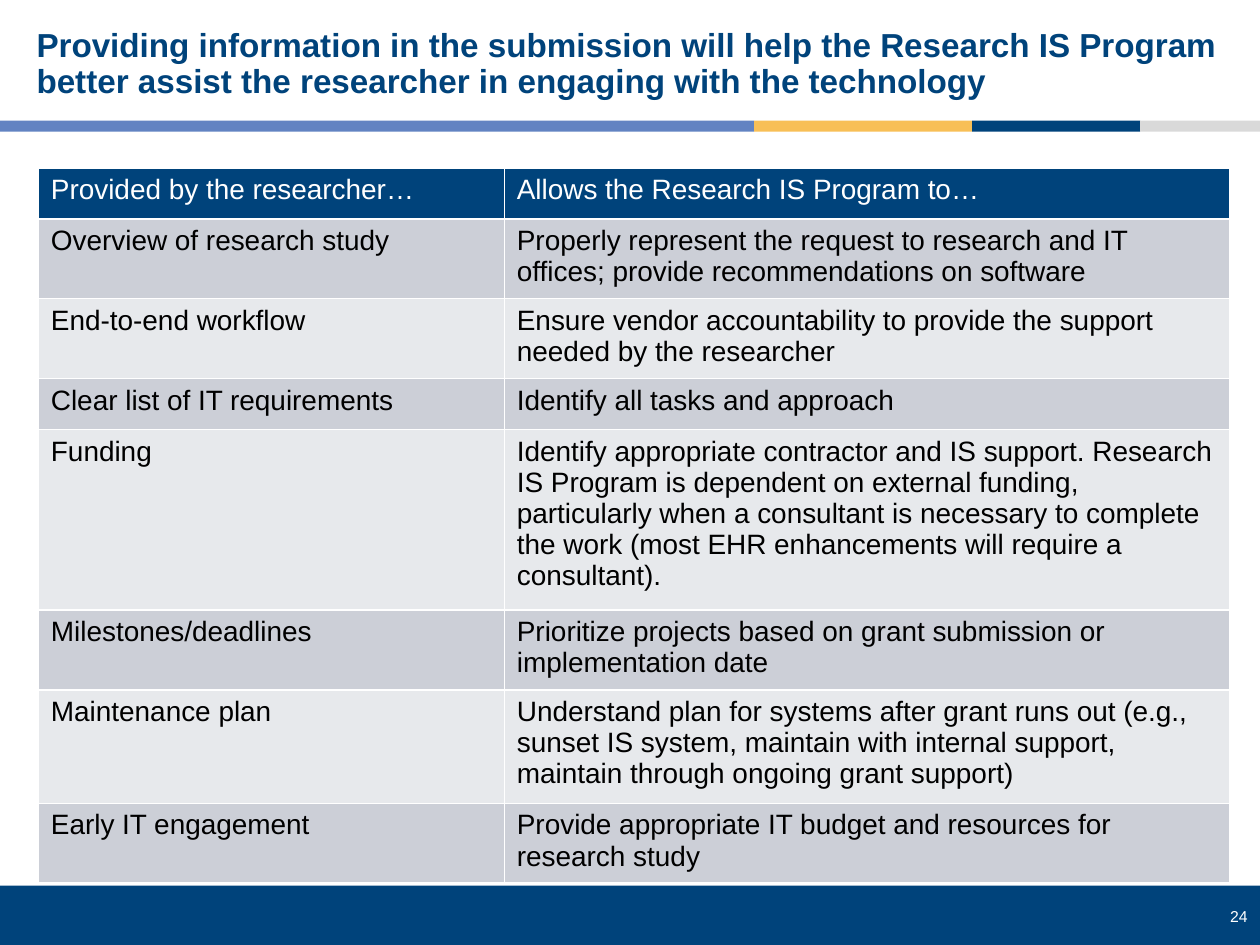
from lxml import etree
from pptx import Presentation
from pptx.dml.color import RGBColor
from pptx.enum.shapes import MSO_SHAPE as SHAPE
from pptx.enum.text import MSO_ANCHOR as ANCHOR, PP_ALIGN as ALIGN
from pptx.oxml.ns import qn
from pptx.util import Pt

NAVY = RGBColor(0x00, 0x43, 0x7B)
BLUE = RGBColor(0x62, 0x83, 0xC2)
GOLD = RGBColor(0xF8, 0xBF, 0x56)
SILVER = RGBColor(0xD9, 0xD9, 0xD9)
BAND_DARK = RGBColor(0xCC, 0xCF, 0xD7)
BAND_LIGHT = RGBColor(0xE7, 0xE9, 0xEC)
WHITE = RGBColor(0xFF, 0xFF, 0xFF)
BLACK = RGBColor(0x00, 0x00, 0x00)
FONT = "Arial"

TITLE = ("Providing information in the submission will help the Research IS Program "
         "better assist the researcher in engaging with the technology")
ROWS = [
    (29.2, "Provided by the researcher…", "Allows the Research IS Program to…"),
    (45.5, "Overview of research study",
     "Properly represent the request to research and IT offices; "
     "provide recommendations on software"),
    (45.5, "End-to-end workflow",
     "Ensure vendor accountability to provide the support needed by the researcher"),
    (29.2, "Clear list of IT requirements", "Identify all tasks and approach"),
    (103.2, "Funding",
     "Identify appropriate contractor and IS support. Research IS Program is dependent "
     "on external funding, particularly when a consultant is necessary to complete the "
     "work (most EHR enhancements will require a consultant)."),
    (45.5, "Milestones/deadlines",
     "Prioritize projects based on grant submission or implementation date"),
    (64.6, "Maintenance plan",
     "Understand plan for systems after grant runs out (e.g., sunset IS system, "
     "maintain with internal support, maintain through ongoing grant support)"),
    (45.5, "Early IT engagement",
     "Provide appropriate IT budget and resources for research study"),
]
COLUMN_SHARES = (0.391, 0.609)
STRIPES = [(0, 431, BLUE), (431, 124.5, GOLD), (555.5, 96, NAVY), (651.5, 68.5, SILVER)]


def write(tf, text, size=16, color=BLACK, bold=False, align=ALIGN.LEFT, spacing=1.0):
    p = tf.paragraphs[0]
    p.alignment = align
    p.line_spacing = spacing
    r = p.add_run()
    r.text = text
    r.font.name = FONT
    r.font.size = Pt(size)
    r.font.bold = bold
    r.font.color.rgb = color


def add_bar(s, left, top, width, height, color):
    sp = s.shapes.add_shape(SHAPE.RECTANGLE, Pt(left), Pt(top), Pt(width), Pt(height))
    sp.shadow.inherit = False
    sp.fill.solid()
    sp.fill.fore_color.rgb = color
    sp.line.fill.background()


def add_title(s, left, top, width, height):
    sp = s.shapes.title
    sp.left, sp.top, sp.width, sp.height = Pt(left), Pt(top), Pt(width), Pt(height)
    tf = sp.text_frame
    tf.word_wrap = True
    tf.vertical_anchor = ANCHOR.MIDDLE
    write(tf, TITLE, size=19, color=NAVY, bold=True, spacing=0.9)


def add_stripes(s, left, top, height):
    for offset, width, color in STRIPES:
        add_bar(s, left + offset, top, width, height, color)


def add_footer(s, left, top, width, height):
    add_bar(s, left, top, width, height, NAVY)
    box = s.shapes.add_textbox(Pt(left + width - 50), Pt(top + 8.6), Pt(50), Pt(18))
    box.text_frame.word_wrap = True
    write(box.text_frame, "24", size=9, color=WHITE, align=ALIGN.RIGHT)


def set_borders(cell, color, width):
    tc_pr = cell._tc.get_or_add_tcPr()
    for side in ("lnL", "lnR", "lnT", "lnB"):
        ln = etree.SubElement(tc_pr, qn(f"a:{side}"), w=str(Pt(width)))
        fill = etree.SubElement(ln, qn("a:solidFill"))
        etree.SubElement(fill, qn("a:srgbClr"), val=str(color))


def add_benefits_table(s, left, top, width):
    height = sum(row[0] for row in ROWS)
    table = s.shapes.add_table(len(ROWS), len(COLUMN_SHARES),
                               Pt(left), Pt(top), Pt(width), Pt(height)).table
    for column, share in zip(table.columns, COLUMN_SHARES):
        column.width = Pt(width * share)
    for i, (row_height, *texts) in enumerate(ROWS):
        table.rows[i].height = Pt(row_height)
        band = BAND_DARK if i % 2 else BAND_LIGHT
        for j, text in enumerate(texts):
            cell = table.cell(i, j)
            set_borders(cell, WHITE, 1)
            cell.fill.solid()
            cell.fill.fore_color.rgb = band if i else NAVY
            write(cell.text_frame, text, color=BLACK if i else WHITE)


def main():
    prs = Presentation()
    prs.slide_width, prs.slide_height = Pt(720), Pt(540)
    s = prs.slides.add_slide(prs.slide_layouts[5])
    add_footer(s, 0, 506, 720, 34)
    add_stripes(s, 0, 69, 6.3)
    add_benefits_table(s, 21.9, 95.9, 681)
    add_title(s, 13.7, 12, 689, 50)
    prs.save("out.pptx")


if __name__ == "__main__":
    main()
